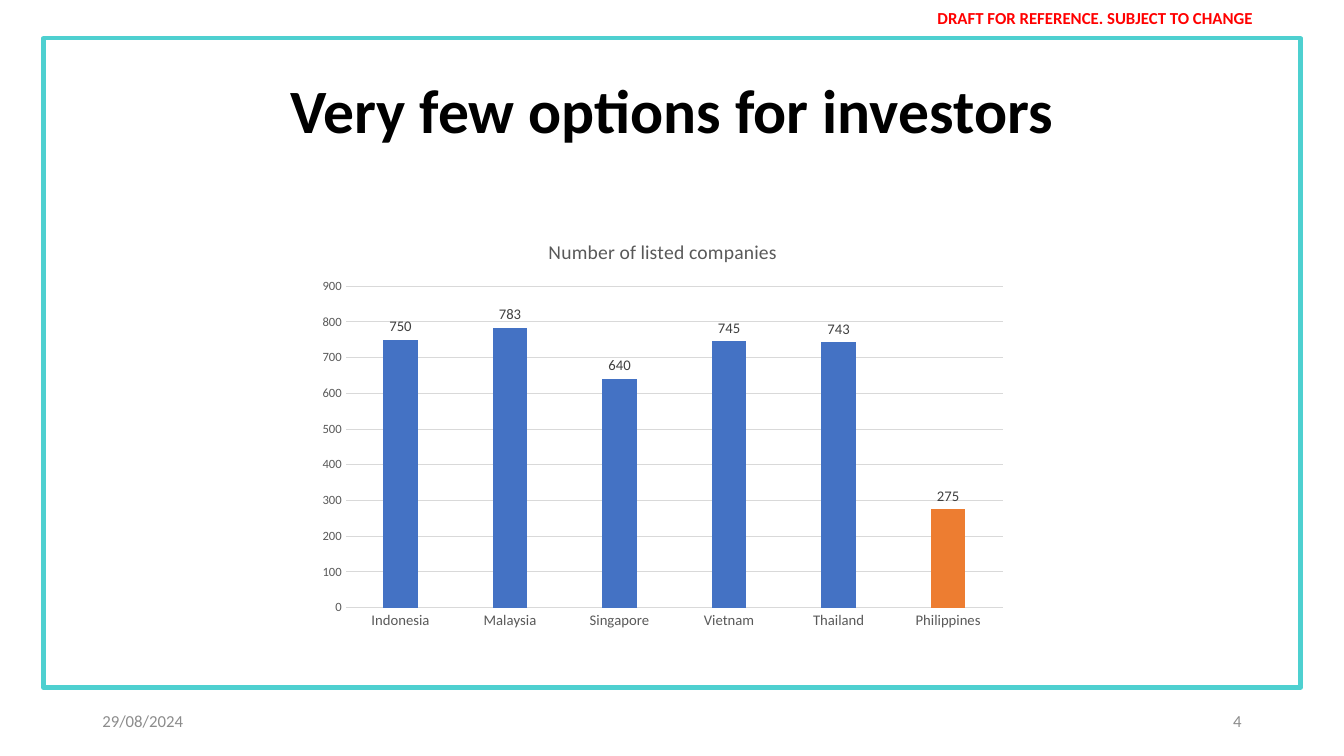
"""Build a slide with a column chart of listed companies by country."""
import pptx
import pptx.chart.data
import pptx.dml.color
import pptx.enum.chart
import pptx.enum.shapes
import pptx.enum.text
import pptx.util

Pt = pptx.util.Pt
ALIGN = pptx.enum.text.PP_ALIGN
COLOURS = {
    "frame": "4ED0D0", "draft": "FF0000", "title": "000000", "footer": "8C8C8C",
    "axis": "595959", "label": "404040", "grid": "D9D9D9",
    "column": "4472C4", "highlight": "ED7D31",
}
LISTED = {"Indonesia": 750, "Malaysia": 783, "Singapore": 640,
          "Vietnam": 745, "Thailand": 743, "Philippines": 275}


def colour(name):
    return pptx.dml.color.RGBColor.from_string(COLOURS[name])


def style_font(font, size, colour_name, bold=False):
    for key, value in {"name": "Calibri", "size": Pt(size), "bold": bold}.items():
        setattr(font, key, value)
    font.color.rgb = colour(colour_name)


deck = pptx.Presentation()
deck.slide_width, deck.slide_height = Pt(960), Pt(540)
page = deck.slides.add_slide(deck.slide_layouts[5])

frame = page.shapes.add_shape(
    pptx.enum.shapes.MSO_SHAPE.RECTANGLE, Pt(31), Pt(27.4), Pt(898), Pt(463.7))
frame.shadow.inherit = False
frame.fill.background()
frame.line.color.rgb = colour("frame")
frame.line.width = Pt(3)

title = page.shapes.title
for key, value in {"left": 66, "top": 28.8, "width": 828, "height": 104.4}.items():
    setattr(title, key, Pt(value))

texts = [
    (title, "Very few options for investors", ALIGN.CENTER, 44, "title", True),
    ((636.5, 3.6, 291.6, 18), "DRAFT FOR REFERENCE. SUBJECT TO CHANGE",
     ALIGN.CENTER, 12, "draft", True),
    ((66, 500.4, 216, 28.8), "29/08/2024", ALIGN.LEFT, 12, "footer", False),
    ((678, 500.4, 216, 28.8), "4", ALIGN.RIGHT, 12, "footer", False),
]
for place, wording, align, size, colour_name, bold in texts:
    if place is title:
        box = title
    else:
        box = page.shapes.add_textbox(*[Pt(length) for length in place])
    box.text_frame.word_wrap = True
    box.text_frame.auto_size = pptx.enum.text.MSO_AUTO_SIZE.NONE
    box.text_frame.vertical_anchor = pptx.enum.text.MSO_ANCHOR.MIDDLE
    para = box.text_frame.paragraphs[0]
    para.alignment = align
    span = para.add_run()
    span.text = wording
    style_font(span.font, size, colour_name, bold)
title.text_frame.paragraphs[0].line_spacing = 0.9

chart_data = pptx.chart.data.CategoryChartData()
chart_data.categories = list(LISTED)
chart_data.add_series("Number of listed companies", list(LISTED.values()))
chart = page.shapes.add_chart(
    pptx.enum.chart.XL_CHART_TYPE.COLUMN_CLUSTERED,
    Pt(220.3), Pt(157.7), Pt(506.2), Pt(298), chart_data).chart
style_font(chart.font, 10, "title")
chart.has_legend = False
chart.has_title = True
heading = chart.chart_title.text_frame
heading.text = "Number of listed companies"
style_font(heading.paragraphs[0].runs[0].font, 14, "axis")
chart.chart_title.include_in_layout = False

for axis, size in ((chart.category_axis, 10.5), (chart.value_axis, 9)):
    axis.major_tick_mark = pptx.enum.chart.XL_TICK_MARK.NONE
    axis.minor_tick_mark = pptx.enum.chart.XL_TICK_MARK.NONE
    style_font(axis.tick_labels.font, size, "axis")
chart.value_axis.has_major_gridlines = True
for key, value in {"minimum_scale": 0, "maximum_scale": 900, "major_unit": 100}.items():
    setattr(chart.value_axis, key, value)
chart.value_axis.format.line.fill.background()
for line in (chart.category_axis.format.line, chart.value_axis.major_gridlines.format.line):
    line.color.rgb = colour("grid")
    line.width = Pt(0.75)

plot = chart.plots[0]
for key, value in {"gap_width": 219, "overlap": -27, "vary_by_categories": False}.items():
    setattr(plot, key, value)
series = plot.series[0]
philippines = series.points[list(LISTED).index("Philippines")]
for part, colour_name in ((series, "column"), (philippines, "highlight")):
    part.format.fill.solid()
    part.format.fill.fore_color.rgb = colour(colour_name)
labels = series.data_labels
labels.show_value = True
labels.position = pptx.enum.chart.XL_LABEL_POSITION.OUTSIDE_END
style_font(labels.font, 10.5, "label")

deck.save("out.pptx")
